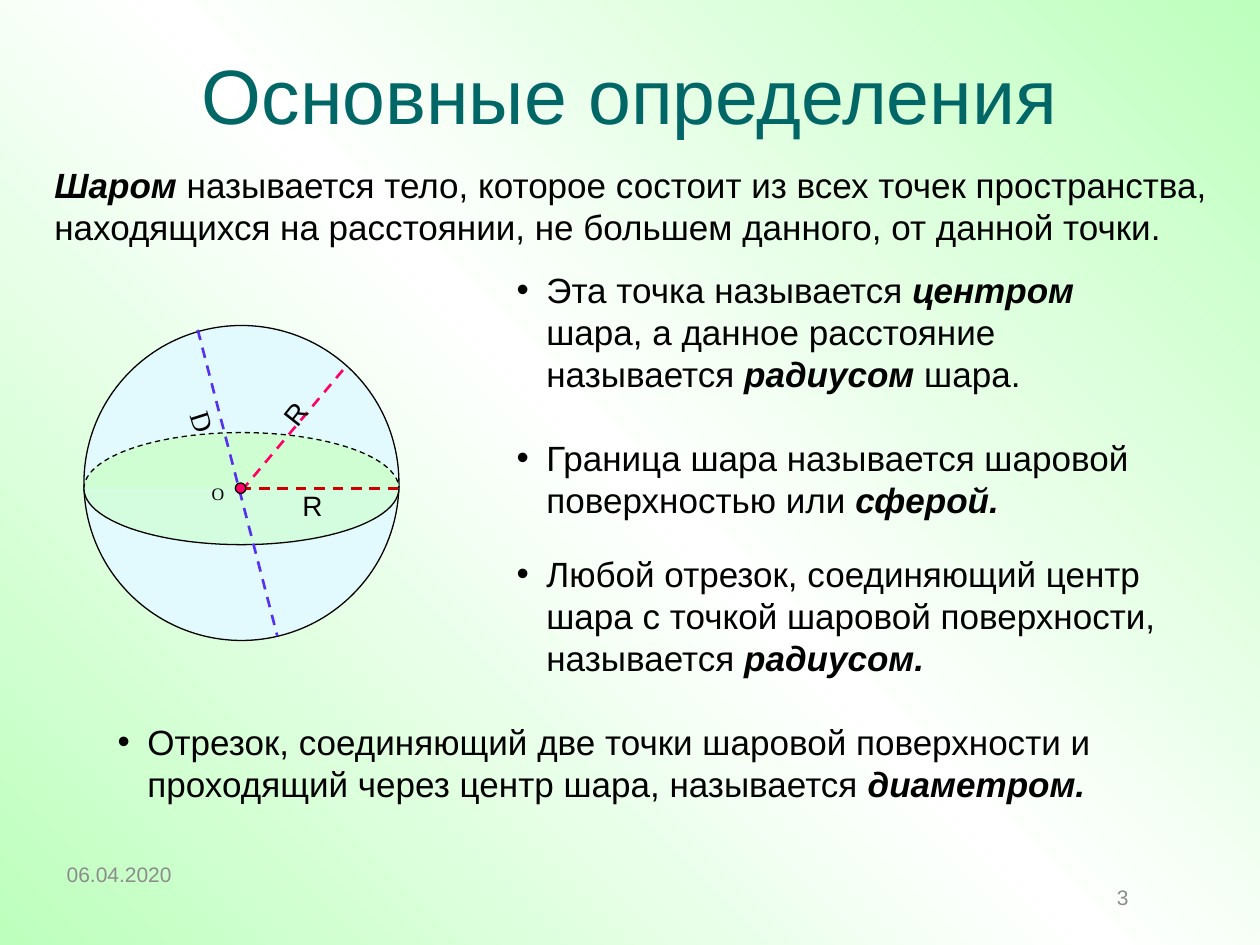
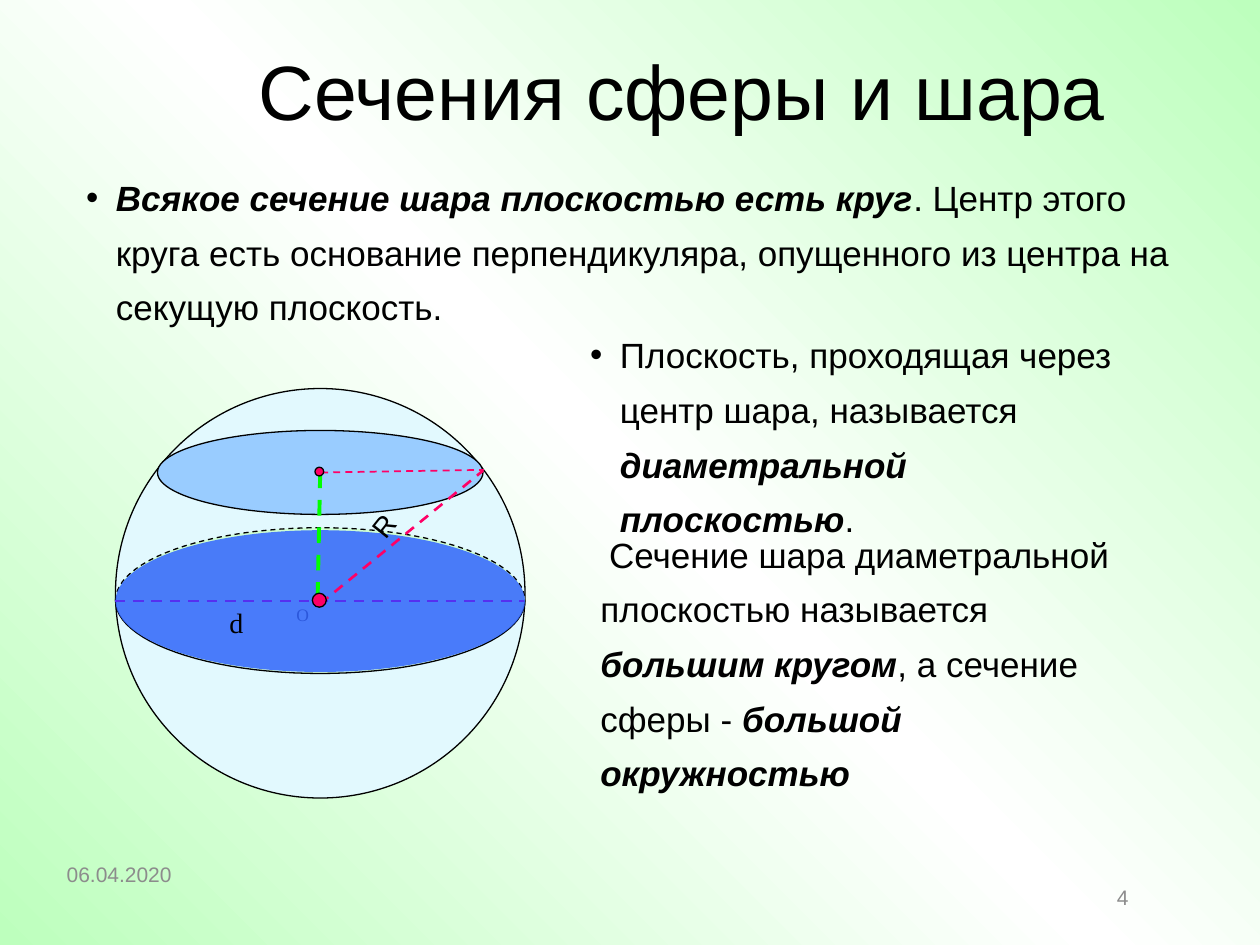
from copy import deepcopy
from math import cos, pi, sin

from lxml.etree import SubElement
from pptx import Presentation
from pptx.dml.color import RGBColor as Rgb
from pptx.enum.dml import MSO_LINE_DASH_STYLE as Dash
from pptx.enum.shapes import MSO_CONNECTOR as Link, MSO_SHAPE as Kind
from pptx.enum.text import MSO_ANCHOR as Anchor, MSO_AUTO_SIZE as Fit, PP_ALIGN as Align
from pptx.oxml.ns import qn
from pptx.util import Pt

HUES = {
    "mint": "BDFFBD", "white": "FFFFFF", "black": "000000", "teal": "006666",
    "gray": "8C8C8C", "ball": "E2F9FE", "disk": "CCFFCC", "red": "CC0000",
    "pink": "FF0066", "violet": "5530F0", "lime": "00FF00",
    "blue": "3366FF", "sky": "99CCFF",
}


def write(shape, text, box, size=20, hue="black", font="Arial", align=Align.LEFT,
          anchor=Anchor.TOP, gaps=(0,), lead=1, hang=0, first=0, turn=0):
    """Place a shape and fill it; *stars* mark bold italic, newlines part paragraphs."""
    shape.left, shape.top, shape.width, shape.height = map(Pt, box)
    shape.rotation = turn
    frame = shape.text_frame
    frame.word_wrap, frame.auto_size = True, Fit.NONE
    frame.vertical_anchor = anchor
    for i, (line, gap) in enumerate(zip(text.split("\n"), gaps)):
        para = frame.add_paragraph() if i else frame.paragraphs[0]
        para.alignment, para.line_spacing = align, lead
        para.space_before = Pt(gap)
        props = para._p.get_or_add_pPr()
        props.set("marL", str(Pt(hang)))
        props.set("indent", str(Pt(first - hang)))
        for j, part in enumerate(line.split("*")):
            if part:
                run = para.add_run()
                run.text = part
                run.font.size, run.font.name = Pt(size), font
                run.font.bold = run.font.italic = j % 2 == 1
                run.font.color.rgb = Rgb.from_string(HUES[hue])


def paint(shape, fill=None, line="black", width=0.75, dash=False, alpha=100):
    if fill:
        shape.fill.solid()
        shape.fill.fore_color.rgb = Rgb.from_string(HUES[fill])
        tint = shape.element.spPr.find(".//" + qn("a:srgbClr"))
        SubElement(tint, qn("a:alpha"), val=str(alpha * 1000))
    if line:
        shape.line.color.rgb = Rgb.from_string(HUES[line])
        shape.line.width = Pt(width)
        if dash:
            shape.line.dash_style = Dash.DASH
    else:
        shape.line.fill.background()
    SubElement(shape.element.spPr, qn("a:effectLst"))


deck = Presentation()
deck.slide_width, deck.slide_height = Pt(720), Pt(540)

# Shared background: mint to white to mint along the diagonal
master = deck.slide_master
back = master.background.fill
back.gradient()
back.gradient_angle = 45
edge, mid = back.gradient_stops
edge.color.rgb = Rgb.from_string(HUES["mint"])
mid.color.rgb = Rgb.from_string(HUES["white"])
edge.position, mid.position = 0, 0.5
stops = master.element.find(".//" + qn("a:gsLst"))
last = deepcopy(stops[0])
last.set("pos", "100000")
stops.append(last)

ROMAN = "Times New Roman"
PAGES = [
    {
        "number": "3",
        "title": ("Основные определения", (36, 22, 648, 63), "teal"),
        "lists": [
            ("Эта точка называется *центром* шара, а данное расстояние называется "
             "*радиусом* шара.\n"
             "Граница шара называется шаровой поверхностью или *сферой.*\n"
             "Любой отрезок, соединяющий центр шара с точкой шаровой поверхности, "
             "называется *радиусом.*", (288, 150, 384, 246)),
            ("Отрезок, соединяющий две точки шаровой поверхности и проходящий через "
             "центр шара, называется *диаметром.*", (60, 408, 630, 56)),
        ],
        "lead": 1,
        "note": ("*Шаром* называется тело, которое состоит из всех точек пространства, "
                 "находящихся на расстоянии, не большем данного, от данной точки.",
                 (24, 90, 678, 56), 0),
        "ball": (48, 186, 180),
        "center": (124.5, 282),
        "cuts": [],
        "lines": [
            (137.5, 279, 227.5, 279, "red", 1.5),
            (113, 188.5, 158.5, 363.5, "violet", 1.5),
            (138, 280.5, 198, 209, "pink", 1.5),
        ],
        "dots": [(137.5, 279, 6)],
        "marks": [("R", 178.5, 289, 0, "Arial"), ("D", 116, 241, 72.5, ROMAN),
                  ("R", 168.5, 236.5, 308.5, "Arial")],
    },
    {
        "number": "4",
        "title": ("Сечения сферы и шара", (84, 18, 612, 66), "black"),
        "lists": [
            ("*Всякое сечение шара плоскостью есть круг*. Центр этого круга есть "
             "основание перпендикуляра, опущенного из центра на секущую плоскость.",
             (42, 90, 642, 101)),
            ("Плоскость, проходящая через центр шара, называется "
             "*диаметральной плоскостью*.", (330, 180, 318, 132)),
        ],
        "lead": 1.3,
        "note": ("Сечение шара диаметральной плоскостью называется *большим кругом*, "
                 "а сечение сферы - *большой окружностью*", (336, 294, 318, 163), 5),
        "ball": (66, 222, 234),
        "center": (173, 351),
        "cuts": [(66, 303, 234, 81, "blue", None, 86), (90, 246, 186, 48, "sky", "black", 100)],
        "lines": [
            (183.5, 270, 276.5, 268.5, "pink", 1),
            (183, 270, 181.5, 342.5, "lime", 2.25),
            (65.5, 343.5, 299.5, 343.5, "violet", 1.5),
            (183, 345, 276, 269, "pink", 1.5),
        ],
        "dots": [(182.5, 269.5, 5), (182.5, 343, 8)],
        "marks": [("d", 135, 355.5, 0, ROMAN), ("R", 219, 300.5, 308.5, "Arial")],
    },
]

for page in PAGES:
    slide = deck.slides.add_slide(deck.slide_layouts.get_by_name("Two Content"))
    shapes = slide.shapes
    text, box, hue = page["title"]
    write(shapes.title, text, box, size=44, hue=hue, align=Align.CENTER, anchor=Anchor.MIDDLE)
    for slot, (text, box) in zip((1, 2), page["lists"]):
        write(slide.placeholders[slot], text, box, gaps=(0, 24, 18), lead=page["lead"], hang=17)
    text, box, first = page["note"]
    write(shapes.add_textbox(0, 0, 0, 0), text, box, lead=page["lead"], first=first)

    # Sphere with the dashed far half and the solid near half of its equator
    left, top, size = page["ball"]
    paint(shapes.add_shape(Kind.OVAL, Pt(left), Pt(top), Pt(size), Pt(size)), "ball")
    half, high, level = size / 2, 0.178 * size, top + 0.518 * size
    for side, alpha in ((-1, 85), (1, 63)):
        arc = [(Pt(left + half - half * cos(pi * k / 48)),
                Pt(level + side * high * sin(pi * k / 48))) for k in range(49)]
        path = shapes.build_freeform(*arc[0])
        path.add_line_segments(arc[1:], close=False)
        paint(path.convert_to_shape(), "disk", dash=side < 0, alpha=alpha)

    x, y = page["center"]
    write(shapes.add_textbox(0, 0, 0, 0), "O", (x - 18, y - 10, 36, 20), size=10,
          font=ROMAN, align=Align.CENTER, anchor=Anchor.MIDDLE)
    for x, y, wide, tall, fill, line, alpha in page["cuts"]:
        cut = shapes.add_shape(Kind.OVAL, Pt(x), Pt(y), Pt(wide), Pt(tall))
        paint(cut, fill, line, alpha=alpha)
    for x1, y1, x2, y2, hue, width in page["lines"]:
        link = shapes.add_connector(Link.STRAIGHT, Pt(x1), Pt(y1), Pt(x2), Pt(y2))
        paint(link, line=hue, width=width, dash=True)
    for x, y, size in page["dots"]:
        dot = shapes.add_shape(Kind.OVAL, Pt(x - size / 2), Pt(y - size / 2), Pt(size), Pt(size))
        paint(dot, "pink")
    for text, x, y, turn, font in page["marks"]:
        write(shapes.add_textbox(0, 0, 0, 0), text, (x - 30, y - 13.5, 60, 27), size=16,
              font=font, align=Align.CENTER, anchor=Anchor.MIDDLE, turn=turn)

    for text, box, align in (("06.04.2020", (31, 485, 96, 29), Align.LEFT),
                             (page["number"], (594, 498, 58, 29), Align.RIGHT)):
        write(shapes.add_textbox(0, 0, 0, 0), text, box, size=12, hue="gray",
              align=align, anchor=Anchor.MIDDLE)

deck.save("out.pptx")
